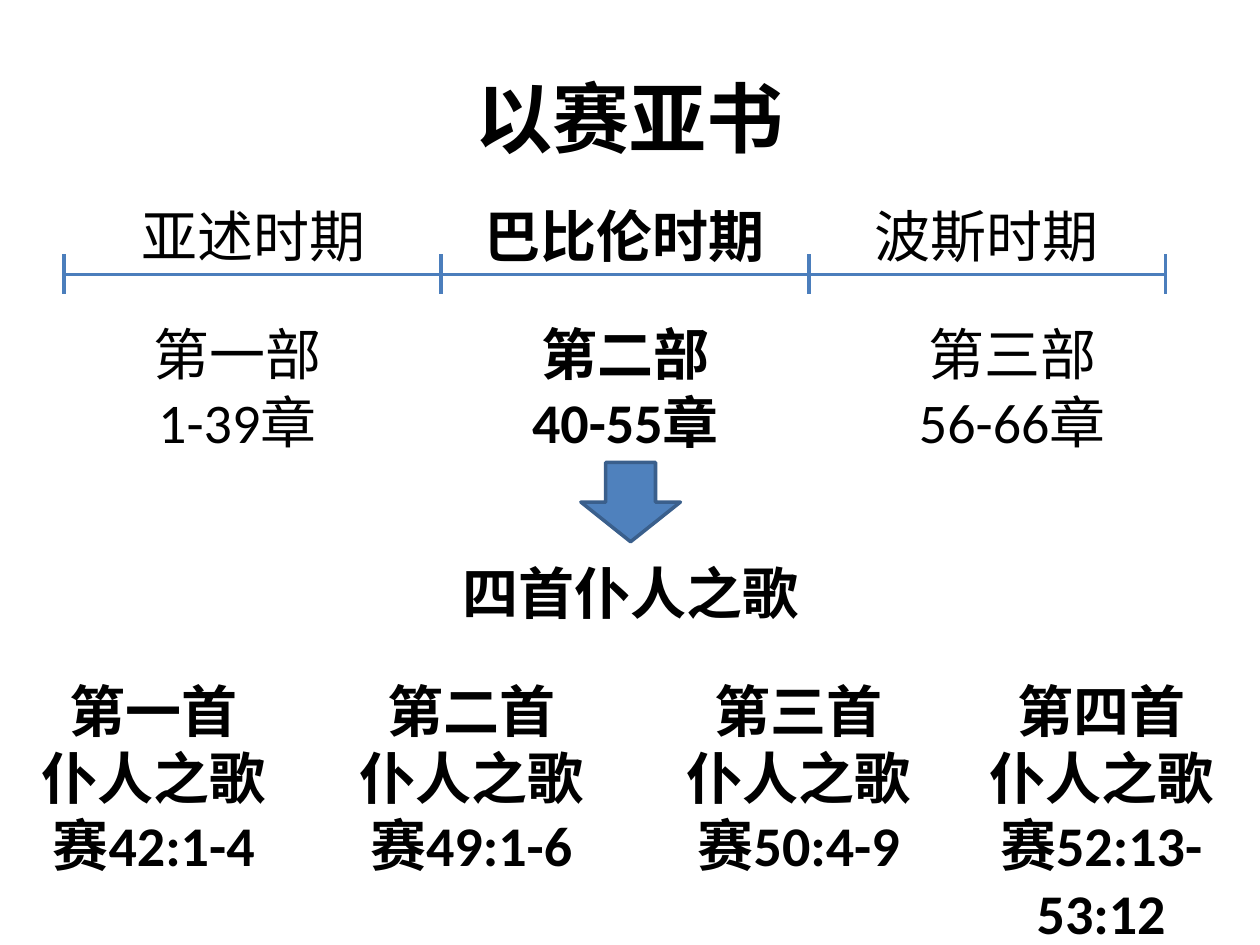
from dataclasses import dataclass

import pptx
import pptx.dml.color
import pptx.enum.shapes
import pptx.enum.text
import pptx.oxml.ns
import pptx.util
from lxml import etree
from pptx.util import Inches

BLACK = pptx.dml.color.RGBColor(0x00, 0x00, 0x00)
LINE_BLUE = pptx.dml.color.RGBColor(0x4B, 0x7E, 0xBC)
ARROW_FILL = pptx.dml.color.RGBColor(0x4F, 0x81, 0xBD)
ARROW_EDGE = pptx.dml.color.RGBColor(0x3A, 0x5F, 0x8C)
FONT = "Calibri"


@dataclass(frozen=True)
class Period:
    name: str
    division: str
    chapters: str
    name_left: float
    name_width: float
    division_left: float
    bold: bool = False


@dataclass(frozen=True)
class Song:
    ordinal: str
    passage: str
    left: float
    height: float = 1.72


PERIODS = [
    Period("亚述时期", "第一部", "1-39章", 0.75, 2.52, 0.98),
    Period("巴比伦时期", "第二部", "40-55章", 3.74, 2.44, 4.06, bold=True),
    Period("波斯时期", "第三部", "56-66章", 6.65, 2.36, 7.13),
]
SONGS = [
    Song("第一首", "赛42:1-4", 0.12),
    Song("第二首", "赛49:1-6", 2.64),
    Song("第三首", "赛50:4-9", 5.24),
    Song("第四首", "赛52:13-53:12", 7.64, height=2.26),
]
TICKS = [0.51, 3.5, 6.42, 9.25]
AXIS_TOP, AXIS_MIDDLE, AXIS_BOTTOM = 2.02, 2.18, 2.33


def add_text(slide, text: str, *, left: float, top: float, width: float,
             height: float, size: float = 32, bold: bool = False,
             anchor=pptx.enum.text.MSO_ANCHOR.TOP) -> None:
    box = slide.shapes.add_textbox(
        Inches(left), Inches(top), Inches(width), Inches(height))
    frame = box.text_frame
    frame.word_wrap = True
    frame.vertical_anchor = anchor
    frame.text = text
    for paragraph in frame.paragraphs:
        paragraph.alignment = pptx.enum.text.PP_ALIGN.CENTER
        font = paragraph.runs[0].font
        font.name = FONT
        font.size = pptx.util.Pt(size)
        font.bold = bold
        font.color.rgb = BLACK


def add_line(slide, x1: float, y1: float, x2: float, y2: float) -> None:
    connector = slide.shapes.add_connector(
        pptx.enum.shapes.MSO_CONNECTOR.STRAIGHT,
        Inches(x1), Inches(y1), Inches(x2), Inches(y2))
    connector.line.color.rgb = LINE_BLUE
    connector.line.width = pptx.util.Pt(2)
    etree.SubElement(connector._element.spPr, pptx.oxml.ns.qn("a:effectLst"))


def add_timeline(slide) -> None:
    add_line(slide, TICKS[0], AXIS_MIDDLE, TICKS[-1], AXIS_MIDDLE)
    for tick in TICKS:
        add_line(slide, tick, AXIS_TOP, tick, AXIS_BOTTOM)


def add_period(slide, period: Period) -> None:
    add_text(slide, period.name, left=period.name_left, top=1.55,
             width=period.name_width, height=0.64, bold=period.bold)
    add_text(slide, f"{period.division}\n{period.chapters}",
             left=period.division_left, top=2.49, width=1.81, height=1.18,
             bold=period.bold)


def add_down_arrow(slide) -> None:
    arrow = slide.shapes.add_shape(
        pptx.enum.shapes.MSO_SHAPE.DOWN_ARROW,
        Inches(4.61), Inches(3.67), Inches(0.79), Inches(0.63))
    arrow.shadow.inherit = False
    arrow.fill.solid()
    arrow.fill.fore_color.rgb = ARROW_FILL
    arrow.line.color.rgb = ARROW_EDGE
    arrow.line.width = pptx.util.Pt(2)


def add_song(slide, song: Song) -> None:
    add_text(slide, f"{song.ordinal}\n仆人之歌\n{song.passage}", left=song.left,
             top=5.32, width=2.2, height=song.height, bold=True)


def main() -> None:
    presentation = pptx.Presentation()
    presentation.slide_width = Inches(10)
    presentation.slide_height = Inches(7.5)
    slide = presentation.slides.add_slide(presentation.slide_layouts[6])
    add_text(slide, "以赛亚书", left=0.5, top=0.3, width=9, height=1.25, size=44,
             bold=True, anchor=pptx.enum.text.MSO_ANCHOR.MIDDLE)
    add_timeline(slide)
    for period in PERIODS:
        add_period(slide, period)
    add_down_arrow(slide)
    add_text(slide, "四首仆人之歌", left=3.35, top=4.38, width=3.31, height=0.64,
             bold=True)
    for song in SONGS:
        add_song(slide, song)
    presentation.save("out.pptx")


if __name__ == "__main__":
    main()
